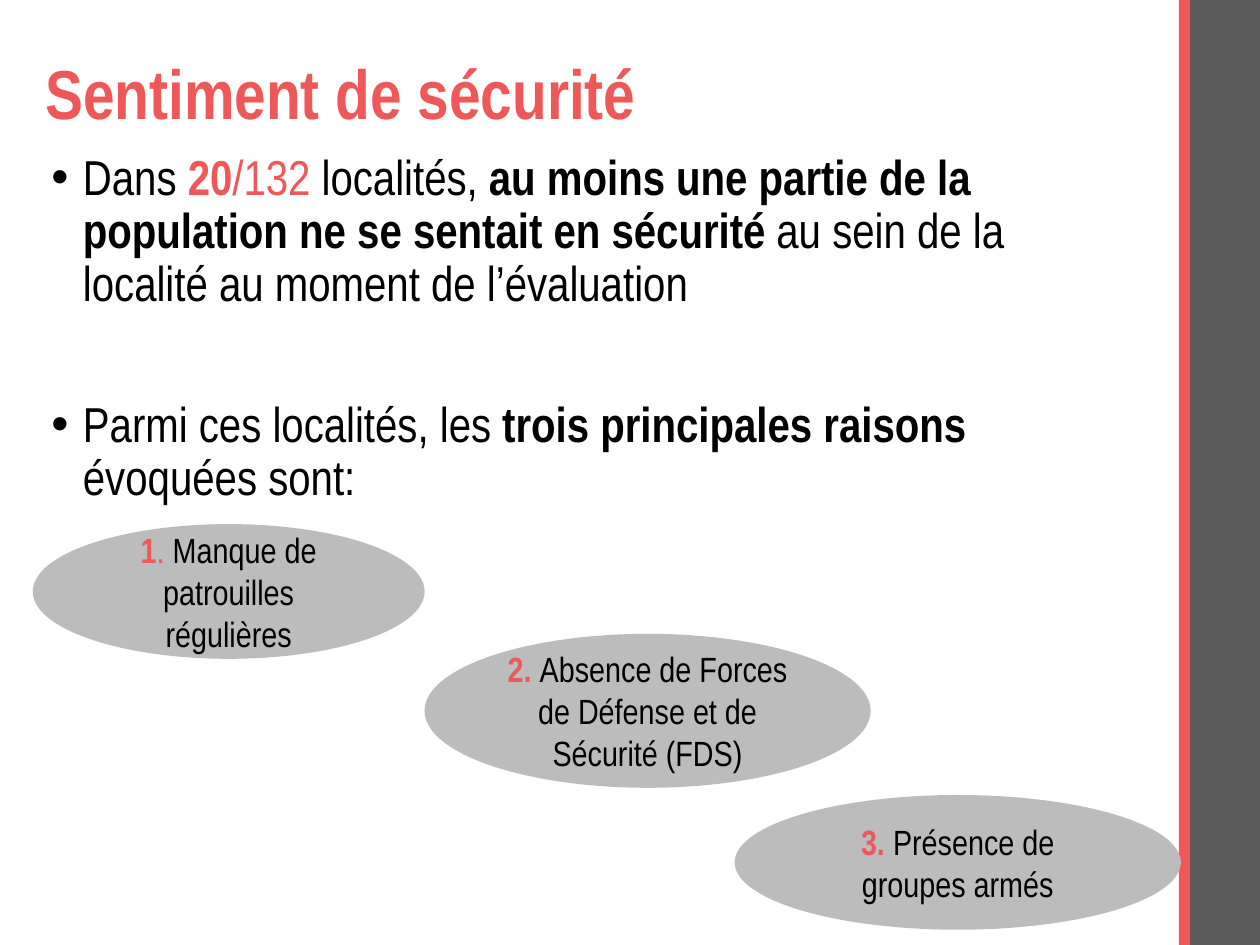
from lxml import etree
from pptx import Presentation
from pptx.dml.color import RGBColor
from pptx.enum.shapes import MSO_SHAPE
from pptx.enum.text import MSO_ANCHOR, MSO_AUTO_SIZE, PP_ALIGN
from pptx.oxml.ns import qn
from pptx.util import Pt

RECTANGLE, OVAL = MSO_SHAPE.RECTANGLE, MSO_SHAPE.OVAL
MIDDLE, NO_FIT = MSO_ANCHOR.MIDDLE, MSO_AUTO_SIZE.NONE
LEFT, CENTER = PP_ALIGN.LEFT, PP_ALIGN.CENTER

RED = RGBColor(0xEE, 0x58, 0x59)
DARK_GREY = RGBColor(0x5A, 0x5A, 0x5A)
LIGHT_GREY = RGBColor(0xBC, 0xBC, 0xBD)
BLACK = RGBColor(0, 0, 0)
FONT = "Arial Narrow"

SLIDE_WIDTH, SLIDE_HEIGHT = 720, 540
TITLE = [("Sentiment de sécurité", RED, True)]
FINDINGS = [
    [
        ("Dans ", BLACK, False),
        ("20", RED, True),
        ("/132 ", RED, False),
        ("localités, ", BLACK, False),
        ("au moins une partie de la population ne se sentait en sécurité ", BLACK, True),
        ("au sein de la localité au moment de l’évaluation", BLACK, False),
    ],
    [
        ("Parmi ces localités, les ", BLACK, False),
        ("trois principales raisons ", BLACK, True),
        ("évoquées sont:", BLACK, False),
    ],
]
REASONS = [
    ((18.7, 299.5, 224, 77),
     [("1", RED, True), (".", RED, False),
      (" Manque de patrouilles régulières", BLACK, False)]),
    ((242.6, 362.2, 255, 88),
     [("2. ", RED, True),
      ("Absence de Forces de Défense et de Sécurité (FDS)", BLACK, False)]),
    ((419.8, 454.3, 255, 77),
     [("3. ", RED, True), ("Présence de groupes armés", BLACK, False)]),
]
SIDE_BARS = [(678.8, 41.2, DARK_GREY), (673.6, 6.5, RED)]
BULLET_INDENT = 18
FINDING_GAP = 50.3


def place(shape, left, top, width, height):
    shape.left, shape.top = Pt(left), Pt(top)
    shape.width, shape.height = Pt(width), Pt(height)


def add_filled(slide, kind, bounds, color):
    shape = slide.shapes.add_shape(kind, *map(Pt, bounds))
    shape.shadow.inherit = False
    shape.fill.solid()
    shape.fill.fore_color.rgb = color
    shape.line.fill.background()
    return shape


def write(para, spans, size, align=LEFT):
    para.alignment = align
    for text, color, bold in spans:
        span = para.add_run()
        span.text = text
        span.font.name = FONT
        span.font.size = Pt(size)
        span.font.bold = bold
        span.font.color.rgb = color


def add_bullet(para):
    properties = para._p.get_or_add_pPr()
    properties.set("marL", str(Pt(BULLET_INDENT)))
    properties.set("indent", str(-Pt(BULLET_INDENT)))
    etree.SubElement(properties, qn("a:buFont")).set("typeface", "Arial")
    etree.SubElement(properties, qn("a:buChar")).set("char", "•")


def main():
    deck = Presentation()
    deck.slide_width, deck.slide_height = Pt(SLIDE_WIDTH), Pt(SLIDE_HEIGHT)
    slide = deck.slides.add_slide(deck.slide_layouts[5])

    for left, width, color in SIDE_BARS:
        add_filled(slide, RECTANGLE, (left, 0, width, SLIDE_HEIGHT), color)

    title = slide.shapes.title
    place(title, 18.7, 28.8, 625.7, 53.3)
    frame = title.text_frame
    frame.auto_size = NO_FIT
    frame.vertical_anchor = MIDDLE
    frame.paragraphs[0].line_spacing = 0.9
    write(frame.paragraphs[0], TITLE, 39.6)

    box = slide.shapes.add_textbox(Pt(22.3), Pt(84.2), Pt(625.7), Pt(452.2))
    frame = box.text_frame
    frame.word_wrap = True
    for index, spans in enumerate(FINDINGS):
        para = frame.add_paragraph() if index else frame.paragraphs[0]
        add_bullet(para)
        para.line_spacing = 0.9
        para.space_before = Pt(FINDING_GAP if index else 0)
        write(para, spans, 28)

    for bounds, spans in REASONS:
        oval = add_filled(slide, OVAL, bounds, LIGHT_GREY)
        oval.text_frame.word_wrap = True
        oval.text_frame.vertical_anchor = MIDDLE
        write(oval.text_frame.paragraphs[0], spans, 20, CENTER)

    deck.save("out.pptx")


if __name__ == "__main__":
    main()
